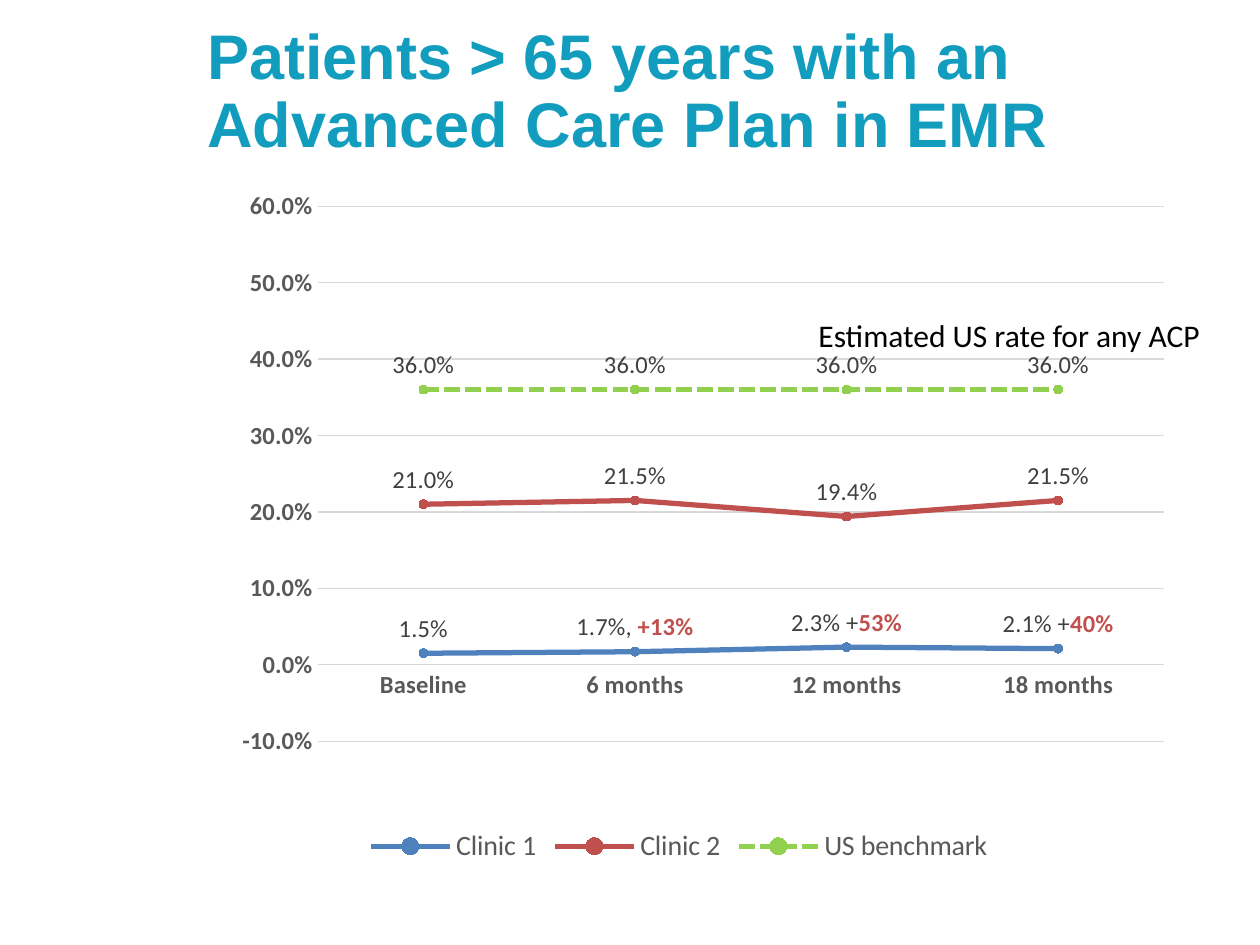
from lxml import etree
from pptx import Presentation, util as u
from pptx.chart.data import CategoryChartData
from pptx.dml.color import RGBColor
from pptx.enum import chart as ch, dml, text
from pptx.oxml.ns import qn

TEAL = RGBColor(0x12, 0x9D, 0xBF)
BLACK = RGBColor(0, 0, 0)
BLUE = RGBColor(0x4F, 0x81, 0xBD)
RED = RGBColor(0xC0, 0x50, 0x4D)
LIME = RGBColor(0x92, 0xD0, 0x50)
GREEN = RGBColor(0x9B, 0xBB, 0x59)
LABEL_GREY = RGBColor(0x40, 0x40, 0x40)
AXIS_GREY = RGBColor(0x59, 0x59, 0x59)
GRID_GREY = RGBColor(0xD9, 0xD9, 0xD9)

PERCENT = "0.0%"
PERIODS = ["Baseline", "6 months", "12 months", "18 months"]
RATES = [
    ("Clinic 1", [0.015, 0.017, 0.023, 0.021], BLUE, BLUE),
    ("Clinic 2", [0.21, 0.215, 0.194, 0.215], RED, RED),
    ("US benchmark", [0.36] * 4, LIME, GREEN),
]
CHANGES = {1: ("1.7%, ", "+13%"), 2: ("2.3% +", "53%"), 3: ("2.1% +", "40%")}
PLOT = {"x": 0.129, "y": 0.024, "w": 0.869, "h": 0.788}


def px(length):
    """Turn pixels at 126 to the inch into EMU."""
    return u.Emu(round(length * 914400 / 126))


def style_font(font, size, color, bold=False, name="Calibri"):
    """Set the face, size, colour and weight of a font."""
    font.name, font.size, font.bold = name, u.Pt(size), bold
    font.color.rgb = color


def style_line(line, color, width):
    """Give a line a solid colour and a width in points."""
    line.color.rgb = color
    line.width = u.Pt(width)


def add_text(page, at, words):
    """Add a wrapping text box and return it."""
    box = page.shapes.add_textbox(*map(px, at))
    box.text_frame.word_wrap = True
    box.text_frame.text = words
    return box


def add_title(page, at, words):
    """Add the bottom-anchored slide title."""
    frame = add_text(page, at, words).text_frame
    frame.vertical_anchor = text.MSO_ANCHOR.BOTTOM
    frame.margin_top = frame.margin_bottom = 0
    para = frame.paragraphs[0]
    para.line_spacing = 0.9
    style_font(para.runs[0].font, 36, TEAL, True, "Arial")


def add_note(page, at, words):
    """Add a plain annotation."""
    para = add_text(page, at, words).text_frame.paragraphs[0]
    style_font(para.runs[0].font, 18, BLACK)


def place_plot(chart):
    """Fix the inner plot area as fractions of the chart."""
    area = chart.element.find(".//" + qn("c:plotArea"))
    layout = area.find(qn("c:layout"))
    if layout is None:
        layout = etree.Element(qn("c:layout"))
        area.insert(0, layout)
    manual = etree.SubElement(layout, qn("c:manualLayout"))
    settings = {"layoutTarget": "inner", "xMode": "edge", "yMode": "edge", **PLOT}
    for tag, value in settings.items():
        etree.SubElement(manual, qn("c:" + tag)).set("val", str(value))


def style_axes(chart):
    """Format both axes and the gridlines."""
    for axis in (chart.category_axis, chart.value_axis):
        axis.major_tick_mark = axis.minor_tick_mark = ch.XL_TICK_MARK.NONE
        style_font(axis.tick_labels.font, 14, AXIS_GREY, True)
    style_line(chart.category_axis.format.line, GRID_GREY, 0.75)
    values = chart.value_axis
    values.minimum_scale, values.maximum_scale, values.major_unit = -0.1, 0.6, 0.1
    values.format.line.fill.background()
    style_line(values.major_gridlines.format.line, GRID_GREY, 0.75)
    values.tick_labels.number_format = PERCENT
    values.tick_labels.number_format_is_linked = False


def style_series(series, color, marker_color):
    """Format the line, markers and value labels of a series."""
    series.smooth = False
    style_line(series.format.line, color, 3)
    series.marker.style = ch.XL_MARKER_STYLE.CIRCLE
    series.marker.size = 5
    series.marker.format.fill.solid()
    series.marker.format.fill.fore_color.rgb = marker_color
    series.marker.format.line.color.rgb = marker_color
    labels = series.data_labels
    labels.show_value = True
    labels.position = ch.XL_LABEL_POSITION.ABOVE
    labels.number_format = PERCENT
    labels.number_format_is_linked = False
    style_font(labels.font, 14, LABEL_GREY)


def add_change_label(point, rate, change):
    """Label a point with its rate and a highlighted change."""
    label = point.data_label
    para = label.text_frame.paragraphs[0]
    for words, color, bold in ((rate, LABEL_GREY, False), (change, RED, True)):
        span = para.add_run()
        span.text = words
        style_font(span.font, 14, color, bold)
    label.position = ch.XL_LABEL_POSITION.ABOVE


def add_rate_chart(page, at):
    """Add the line chart of care plan rates."""
    data = CategoryChartData(number_format=PERCENT)
    data.categories = PERIODS
    for name, values, *_ in RATES:
        data.add_series(name, values)
    kind = ch.XL_CHART_TYPE.LINE_MARKERS
    chart = page.shapes.add_chart(kind, *map(px, at), data).chart
    chart.has_title = False
    style_font(chart.font, 10, BLACK)
    chart.has_legend = True
    chart.legend.position = ch.XL_LEGEND_POSITION.BOTTOM
    chart.legend.include_in_layout = False
    style_font(chart.legend.font, 16, AXIS_GREY)
    place_plot(chart)
    style_axes(chart)
    plot = chart.plots[0]
    plot.vary_by_categories = False
    clinic, _, benchmark = plot.series
    for series, (*_, color, marker_color) in zip(plot.series, RATES):
        style_series(series, color, marker_color)
    benchmark.format.line.dash_style = dml.MSO_LINE.SQUARE_DOT
    for index, (rate, change) in CHANGES.items():
        add_change_label(clinic.points[index], rate, change)


def main():
    """Build the slide and save it."""
    deck = Presentation()
    deck.slide_width, deck.slide_height = px(1260), px(945)
    page = deck.slides.add_slide(deck.slide_layouts[6])
    add_title(page, (195, 11, 915, 150),
              "Patients > 65 years with an Advanced Care Plan in EMR")
    add_note(page, (806, 310, 436, 50), "Estimated US rate for any ACP")
    add_rate_chart(page, (192, 190, 974, 679))
    deck.save("out.pptx")


if __name__ == "__main__":
    main()
